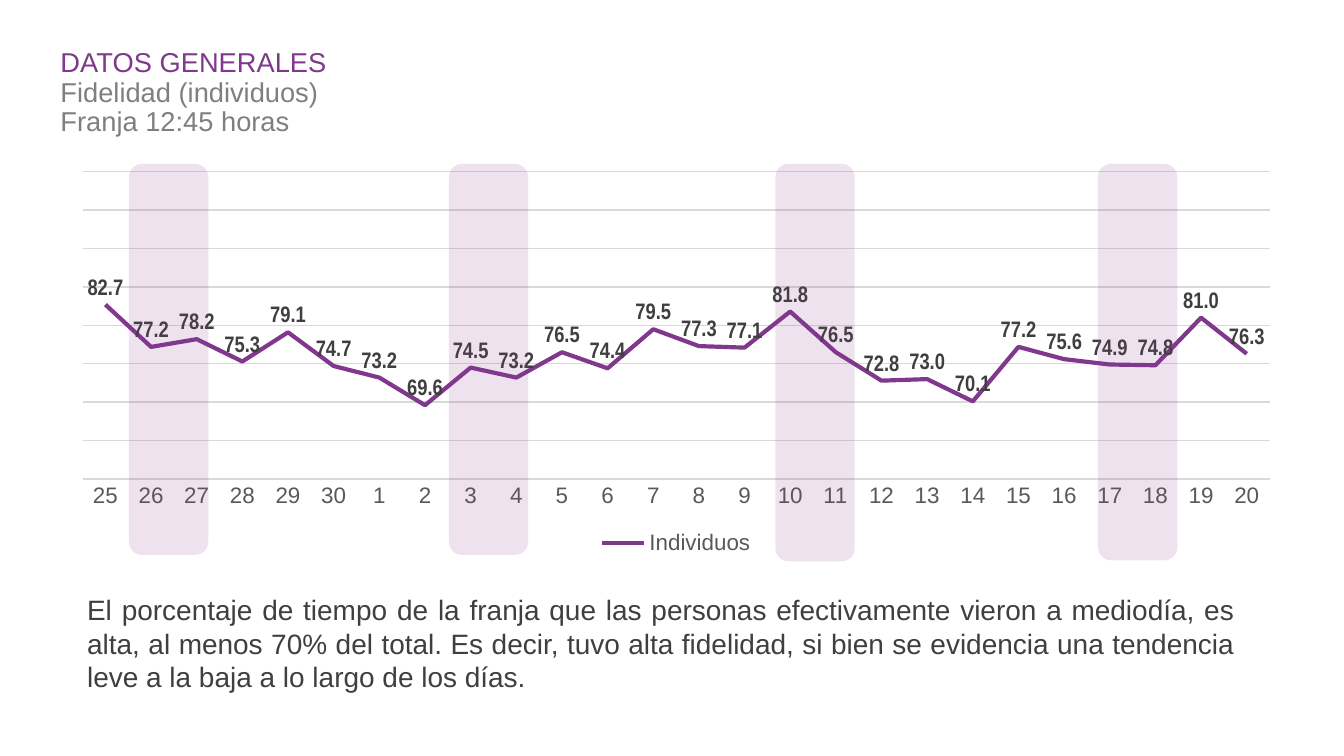
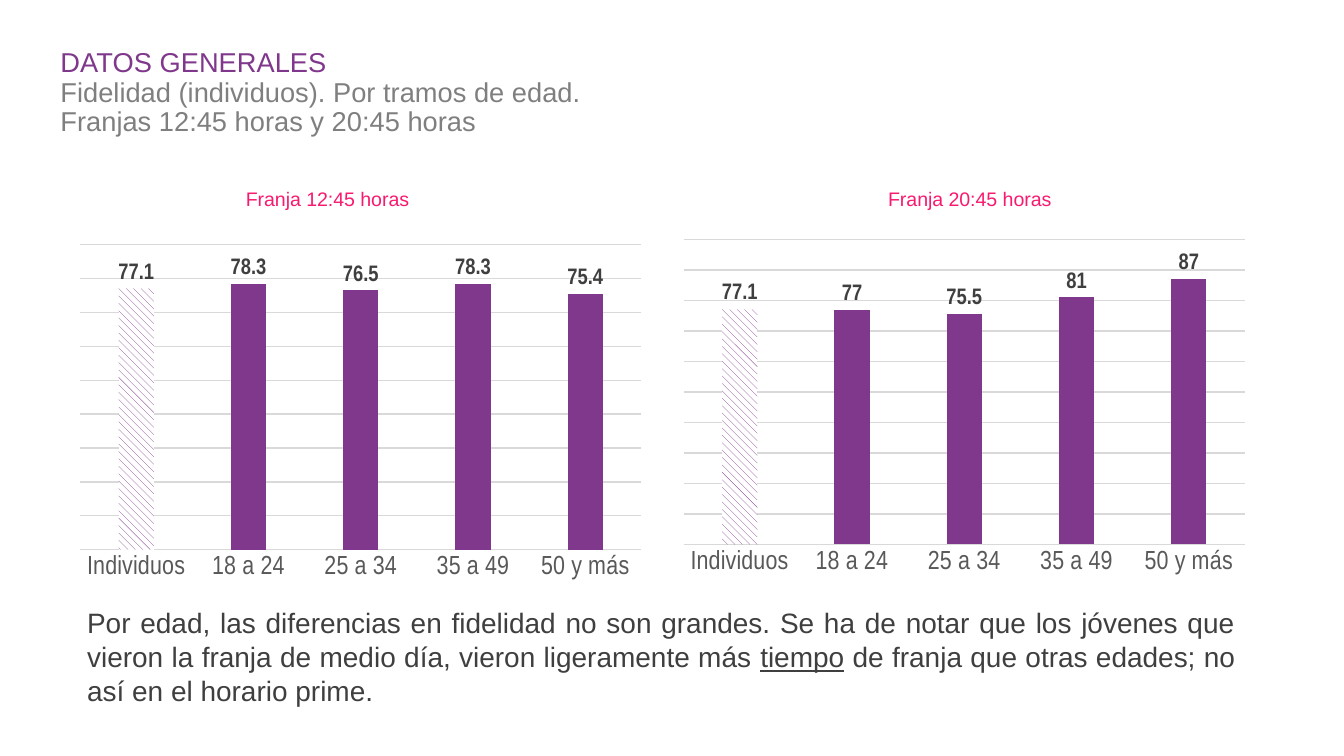
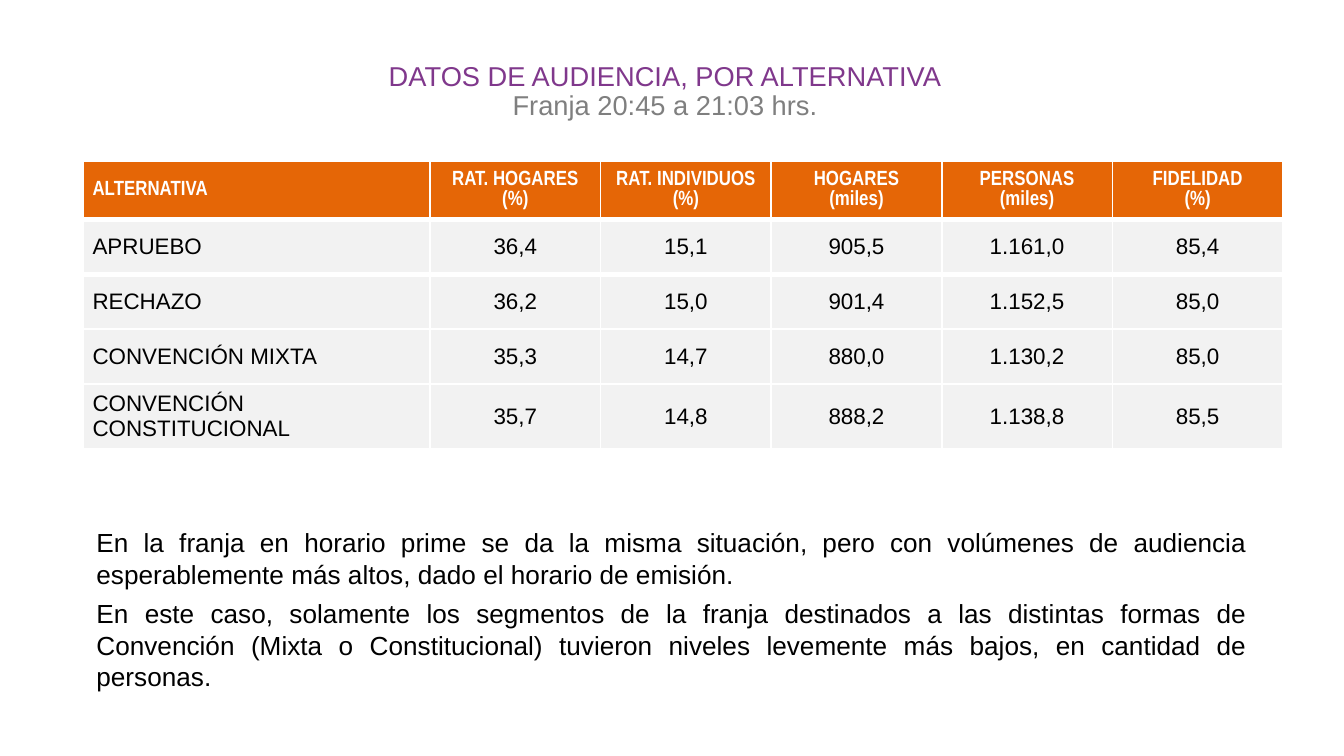
from lxml.etree import SubElement
from pptx import Presentation
from pptx.chart.data import CategoryChartData
from pptx.dml.color import RGBColor
from pptx.enum.chart import XL_CHART_TYPE as Kind
from pptx.enum.chart import XL_LABEL_POSITION as Spot
from pptx.enum.chart import XL_LEGEND_POSITION as Side
from pptx.enum.chart import XL_MARKER_STYLE as Mark
from pptx.enum.chart import XL_TICK_MARK as Tick
from pptx.enum.dml import MSO_PATTERN_TYPE as Pattern
from pptx.enum.shapes import MSO_SHAPE as Shape
from pptx.enum.text import MSO_ANCHOR as Anchor
from pptx.enum.text import MSO_AUTO_SIZE as Fit
from pptx.enum.text import PP_ALIGN as Align
from pptx.oxml.ns import qn
from pptx.util import Pt

PURPLE = RGBColor(0x80, 0x38, 0x8C)
GRAY = RGBColor(0x7F, 0x7F, 0x7F)
PINK = RGBColor(0xF9, 0x1A, 0x6F)
ORANGE = RGBColor(0xE5, 0x66, 0x06)
DARK = RGBColor(0x3F, 0x3F, 0x3F)
AXIS = RGBColor(0x59, 0x59, 0x59)
GRID = RGBColor(0xD9, 0xD9, 0xD9)
PALE = RGBColor(0xF2, 0xF2, 0xF2)
WHITE = RGBColor(0xFF, 0xFF, 0xFF)
BLACK = RGBColor(0, 0, 0)
SANS = "Arial"
NARROW = "Arial Narrow"

DAYS = [*range(25, 31), *range(1, 21)]
DAILY = [82.7, 77.2, 78.2, 75.3, 79.1, 74.7, 73.2, 69.6, 74.5, 73.2, 76.5, 74.4, 79.5,
         77.3, 77.1, 81.8, 76.5, 72.8, 73, 70.1, 77.2, 75.6, 74.9, 74.8, 81, 76.3]
WEEKENDS = [(69.1, 209.5), (240.5, 209.5), (415.4, 213), (588.2, 212.4)]  # left, height
AGES = ["Individuos", "18 a 24", "25 a 34", "35 a 49", "50 y más"]
NOON = [77.1, 78.3, 76.5, 78.3, 75.4]
PRIME = [77.1, 77, 75.5, 81, 87]
HEADS = ["ALTERNATIVA", "RAT. HOGARES\n(%)", "RAT. INDIVIDUOS (%)",
         "HOGARES\n(miles)", "PERSONAS\n(miles)", "FIDELIDAD\n(%)"]
ROWS = [
    ["APRUEBO", "36,4", "15,1", "905,5", "1.161,0", "85,4"],
    ["RECHAZO", "36,2", "15,0", "901,4", "1.152,5", "85,0"],
    ["CONVENCIÓN MIXTA", "35,3", "14,7", "880,0", "1.130,2", "85,0"],
    ["CONVENCIÓN CONSTITUCIONAL", "35,7", "14,8", "888,2", "1.138,8", "85,5"],
]


def style(font, size, color, name=SANS, bold=False):
    font.size, font.name, font.bold = Pt(size), name, bold
    font.color.rgb = color


def write(frame, text, size, color, name=SANS, bold=False, align=Align.LEFT,
          line=None, before=0):
    """Add a paragraph per line of text; words between underscores are underlined."""
    for row in text.split("\n"):
        para = frame.paragraphs[0]
        if para.runs:
            para = frame.add_paragraph()
        para.alignment, para.line_spacing = align, line
        para.space_before = Pt(before)
        for i, part in enumerate(row.split("_")):
            run = para.add_run()
            run.text = part
            style(run.font, size, color, name, bold)
            if i % 2:
                run.font.underline = True


def place(shape, left, top, width, height):
    shape.left, shape.top = Pt(left), Pt(top)
    shape.width, shape.height = Pt(width), Pt(height)


def pad(item, side, end):
    item.margin_left = item.margin_right = Pt(side)
    item.margin_top = item.margin_bottom = Pt(end)


def start(deck, head, sub, box, align=Align.LEFT):
    """Add a slide with its two-colour title."""
    slide = deck.slides.add_slide(deck.slide_layouts[5])
    title = slide.shapes.title
    place(title, *box)
    frame = title.text_frame
    frame.auto_size, frame.vertical_anchor = Fit.NONE, Anchor.MIDDLE
    pad(frame, 5, 2.7)
    write(frame, head, 14.6, PURPLE, align=align, line=0.9)
    write(frame, sub, 14.6, GRAY, align=align, line=0.9)
    return slide


def note(slide, box, wrap=True):
    frame = slide.shapes.add_textbox(*map(Pt, box)).text_frame
    frame.word_wrap, frame.auto_size = wrap, Fit.SHAPE_TO_FIT_TEXT
    return frame


def band(slide, left, height):
    shape = slide.shapes.add_shape(Shape.FLOWCHART_ALTERNATE_PROCESS,
                                   Pt(left), Pt(87.8), Pt(42.5), Pt(height))
    shape.shadow.inherit = False
    shape.line.fill.background()
    shape.fill.solid()
    shape.fill.fore_color.rgb = PURPLE
    tint = shape.fill._xPr.find(".//" + qn("a:srgbClr"))
    SubElement(tint, qn("a:alpha")).set("val", "14000")


def plot(slide, kind, box, cats, name, vals, size, face, form):
    """Add a one-series chart with the shared axes and labels."""
    data = CategoryChartData()
    data.categories = [str(cat) for cat in cats]
    data.add_series(name, vals)
    chart = slide.shapes.add_chart(kind, *map(Pt, box), data).chart
    style(chart.font, 10, BLACK)
    chart.has_title = chart.has_legend = False
    axis = chart.category_axis
    axis.major_tick_mark = Tick.NONE
    style(axis.tick_labels.font, size, AXIS, face)
    scale = chart.value_axis
    scale.visible, scale.has_major_gridlines = False, True
    for line in (axis.format.line, scale.major_gridlines.format.line):
        line.color.rgb, line.width = GRID, Pt(0.75)
    area = chart.plots[0]
    area.vary_by_categories, area.has_data_labels = False, True
    labels = area.data_labels
    labels.show_value = True
    labels.number_format, labels.number_format_is_linked = form, False
    style(labels.font, 12, DARK, NARROW, True)
    return chart


def trend(slide):
    chart = plot(slide, Kind.LINE_STACKED, (31, 87.8, 662.4, 212.4), DAYS,
                 "Individuos", DAILY, 12, SANS, "#,##0.0")
    chart.value_axis.minimum_scale, chart.value_axis.maximum_scale = 60, 100
    chart.plots[0].data_labels.position = Spot.ABOVE
    series = chart.plots[0].series[0]
    series.smooth, series.marker.style = False, Mark.NONE
    series.format.line.color.rgb, series.format.line.width = PURPLE, Pt(2.25)
    chart.has_legend = True
    chart.legend.position, chart.legend.include_in_layout = Side.BOTTOM, False
    style(chart.legend.font, 12, AXIS)


def bars(slide, left, top, vals):
    """Add columns by age, the overall one hatched."""
    chart = plot(slide, Kind.COLUMN_CLUSTERED, (left, top, 313.2, 187.2), AGES,
                 "Series 1", vals, 14, NARROW, "General")
    chart.value_axis.minimum_scale = 0
    area = chart.plots[0]
    area.gap_width, area.overlap = 219, -27
    area.data_labels.position = Spot.OUTSIDE_END
    series = area.series[0]
    series.format.fill.solid()
    series.format.fill.fore_color.rgb = PURPLE
    hatch = series.points[0].format.fill
    hatch.patterned()
    hatch.pattern = Pattern.WIDE_DOWNWARD_DIAGONAL
    hatch.fore_color.rgb, hatch.back_color.rgb = PURPLE, WHITE


def edge(cell, tag, width):
    """Draw a white border on one side; call before the cell is filled."""
    line = SubElement(cell._tc.get_or_add_tcPr(), qn(tag))
    line.set("w", str(Pt(width)))
    fill = SubElement(line, qn("a:solidFill"))
    SubElement(fill, qn("a:srgbClr")).set("val", str(WHITE))


def grid(slide):
    widths = [185.8] + [91.4] * 5
    heights = [31] + [29.5] * 3 + [34.6]
    box = (44.6, 86.4, sum(widths), sum(heights))
    table = slide.shapes.add_table(5, 6, *map(Pt, box)).table
    for col, width in zip(table.columns, widths):
        col.width = Pt(width)
    for row, height in zip(table.rows, heights):
        row.height = Pt(height)
    for r, texts in enumerate([HEADS] + ROWS):
        for c, text in enumerate(texts):
            cell = table.cell(r, c)
            pad(cell, 5, 2.7)
            cell.vertical_anchor = Anchor.MIDDLE
            if r < 2:
                edge(cell, "a:lnT" if r else "a:lnB", 3)
            cell.fill.solid()
            cell.fill.fore_color.rgb = PALE if r else ORANGE
            align = Align.CENTER if c else Align.LEFT
            if r:
                write(cell.text_frame, text, 12, BLACK, align=align)
            else:
                write(cell.text_frame, text, 11, WHITE, NARROW, True, align)


def main():
    deck = Presentation()
    deck.slide_width, deck.slide_height = Pt(720), Pt(405)
    corner = (27.4, 20.9, 576, 58.3)

    slide = start(deck, "DATOS GENERALES",
                  "Fidelidad (individuos)\nFranja 12:45 horas", corner)
    trend(slide)
    for left, height in WEEKENDS:
        band(slide, left, height)
    write(note(slide, (39.6, 314, 629.3, 62)),
          "El porcentaje de tiempo de la franja que las personas efectivamente vieron a "
          "mediodía, es alta, al menos 70% del total. Es decir, tuvo alta fidelidad, si bien "
          "se evidencia una tendencia leve a la baja a lo largo de los días.",
          15, DARK, align=Align.JUSTIFY)

    slide = start(deck, "DATOS GENERALES",
                  "Fidelidad (individuos). Por tramos de edad.\n"
                  "Franjas 12:45 horas y 20:45 horas", corner)
    for left, text in ((124.6, "Franja 12:45 horas"), (468.7, "Franja 20:45 horas")):
        write(note(slide, (left, 96.5, 103.7, 20), wrap=False), text, 10.5, PINK)
    bars(slide, 36.7, 127.4, NOON)
    bars(slide, 360, 124.6, PRIME)
    write(note(slide, (39.6, 321.1, 629.3, 62)),
          "Por edad, las diferencias en fidelidad no son grandes. Se ha de notar que los "
          "jóvenes que vieron la franja de medio día, vieron ligeramente más _tiempo_ de "
          "franja que otras edades; no así en el horario prime.",
          15, DARK, align=Align.JUSTIFY)

    slide = start(deck, "DATOS DE AUDIENCIA, POR ALTERNATIVA",
                  "Franja 20:45 a 21:03 hrs.", (68.4, 28, 576, 42.5), Align.CENTER)
    grid(slide)
    frame = note(slide, (44.6, 278.6, 630.7, 97.2))
    write(frame,
          "En la franja en horario prime se da la misma situación, pero con volúmenes de "
          "audiencia esperablemente más altos, dado el horario de emisión.",
          14, BLACK, align=Align.JUSTIFY)
    write(frame,
          "En este caso, solamente los segmentos de la franja destinados a las distintas "
          "formas de Convención (Mixta o Constitucional) tuvieron niveles levemente más "
          "bajos, en cantidad de personas.",
          14, BLACK, align=Align.JUSTIFY, before=4.5)

    deck.save("out.pptx")


if __name__ == "__main__":
    main()
